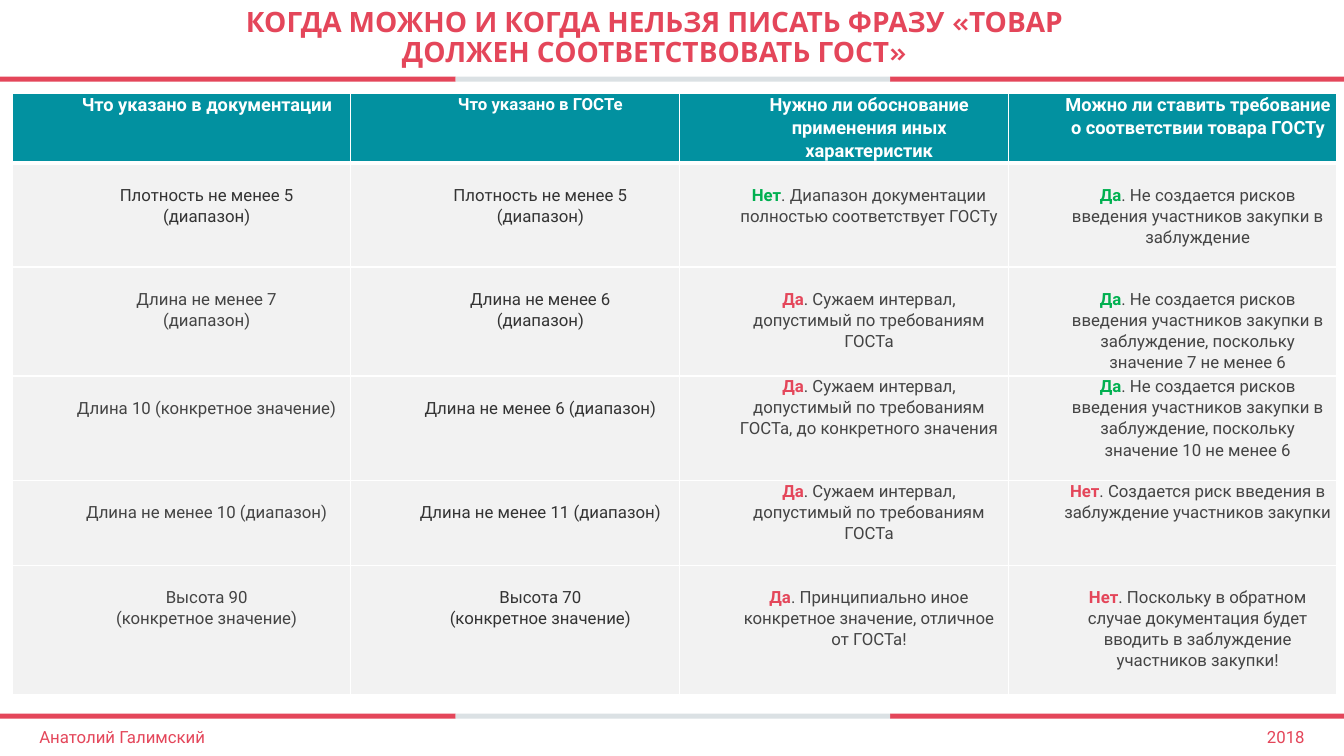
from dataclasses import dataclass

from lxml import etree
from pptx import Presentation
from pptx.dml.color import RGBColor
from pptx.enum.shapes import MSO_SHAPE
from pptx.enum.text import MSO_ANCHOR, MSO_AUTO_SIZE, PP_ALIGN
from pptx.oxml.ns import qn
from pptx.util import Inches, Pt

RECT = MSO_SHAPE.RECTANGLE
LEFT, CENTER, RIGHT = PP_ALIGN.LEFT, PP_ALIGN.CENTER, PP_ALIGN.RIGHT
TOP, MIDDLE = MSO_ANCHOR.TOP, MSO_ANCHOR.MIDDLE
NO_FIT = MSO_AUTO_SIZE.NONE


@dataclass(frozen=True)
class Theme:
    red: str = "E4465A"
    green: str = "00B050"
    teal: str = "0291A0"
    silver: str = "DBE1E4"
    cell: str = "F2F2F2"
    white: str = "FFFFFF"
    dark: str = "333333"
    gray: str = "444444"
    title_font: str = "Karla"
    body_font: str = "Roboto"
    title_size: int = 20
    header_size: int = 13
    body_size: int = 12


THEME = Theme()

TITLE = "КОГДА МОЖНО И КОГДА НЕЛЬЗЯ ПИСАТЬ ФРАЗУ «ТОВАР ДОЛЖЕН СООТВЕТСТВОВАТЬ ГОСТ»"
HEADERS = [
    "Что указано в документации",
    "Что указано в ГОСТе",
    "Нужно ли обоснование применения иных характеристик",
    "Можно ли ставить требование о соответствии товара ГОСТу",
]
HEADER_SIZES = [THEME.header_size, THEME.body_size, THEME.header_size, THEME.header_size]
NO_RISK = ". Не создается рисков введения участников закупки в заблуждение"
NARROW = ". Сужаем интервал, допустимый по требованиям ГОСТа"
GOOD_YES, BAD_YES = ("Да", THEME.green), ("Да", THEME.red)
GOOD_NO, BAD_NO = ("Нет", THEME.green), ("Нет", THEME.red)
ROWS = [
    ("Плотность не менее 5\n(диапазон)", "Плотность не менее 5\n(диапазон)",
     (GOOD_NO, ". Диапазон документации полностью соответствует ГОСТу"),
     (GOOD_YES, NO_RISK)),
    ("Длина не менее 7\n(диапазон)", "Длина не менее 6\n(диапазон)",
     (BAD_YES, NARROW),
     (GOOD_YES, NO_RISK + ", поскольку значение 7 не менее 6")),
    ("Длина 10 (конкретное значение)", "Длина не менее 6 (диапазон)",
     (BAD_YES, NARROW + ", до конкретного значения"),
     (GOOD_YES, NO_RISK + ", поскольку значение 10 не менее 6")),
    ("Длина не менее 10 (диапазон)", "Длина не менее 11 (диапазон)",
     (BAD_YES, NARROW),
     (BAD_NO, ". Создается риск введения в заблуждение участников закупки")),
    ("Высота 90\n(конкретное значение)", "Высота 70\n(конкретное значение)",
     (BAD_YES, ". Принципиально иное конкретное значение, отличное от ГОСТа!"),
     (BAD_NO, ". Поскольку в обратном случае документация будет вводить в заблуждение участников закупки!")),
]
COL_WIDTHS = [3.36, 3.26, 3.26, 3.26]
ROW_HEIGHTS = [0.69, 1.03, 1.08, 1.04, 0.84, 1.28]
LINE = 0.21
HIGH_VERDICT_ROWS = (3, 4)


def add_text(p, text, font=THEME.body_font, size=THEME.body_size,
             color=THEME.gray, bold=False, align=CENTER, spacing=1.0, indent=0):
    p.alignment = align
    p.line_spacing = spacing
    if indent:
        p_pr = p._p.get_or_add_pPr()
        p_pr.set("marL", str(Inches(indent)))
        p_pr.set("indent", "0")
    r = p.add_run()
    r.text = text
    r.font.name = font
    r.font.size = Pt(size)
    r.font.bold = bold
    r.font.color.rgb = RGBColor.from_string(color)


class SlideBuilder:
    def __init__(self, prs, theme):
        self.theme = theme
        self.s = prs.slides.add_slide(prs.slide_layouts[5])

    def title(self, text, x, y, w, h):
        sp = self.s.shapes.title
        sp.left, sp.top, sp.width, sp.height = map(Inches, (x, y, w, h))
        tf = sp.text_frame
        tf.word_wrap = True
        tf.auto_size = NO_FIT
        tf.vertical_anchor = MIDDLE
        add_text(tf.paragraphs[0], text, font=self.theme.title_font,
                 size=self.theme.title_size, color=self.theme.red, bold=True, spacing=0.9)

    def stripe(self, y):
        t = self.theme
        for x, w, color in ((0, 4.52, t.red), (8.83, 4.5, t.red), (4.52, 4.31, t.silver)):
            sp = self.s.shapes.add_shape(RECT, Inches(x), Inches(y), Inches(w), Inches(0.05))
            sp.shadow.inherit = False
            sp.fill.solid()
            sp.fill.fore_color.rgb = RGBColor.from_string(color)
            sp.line.fill.background()

    def label(self, text, x, y, w, h, align):
        sp = self.s.shapes.add_textbox(Inches(x), Inches(y), Inches(w), Inches(h))
        tf = sp.text_frame
        tf.word_wrap = True
        tf.vertical_anchor = MIDDLE
        tf.margin_left = tf.margin_top = tf.margin_right = tf.margin_bottom = 0
        add_text(tf.paragraphs[0], text, color=self.theme.red, align=align)

    def border(self, cell, side, width):
        ln = etree.SubElement(cell._tc.get_or_add_tcPr(), qn(f"a:{side}"), w=str(Pt(width)))
        fill = etree.SubElement(ln, qn("a:solidFill"))
        etree.SubElement(fill, qn("a:srgbClr"), val=self.theme.white)

    def cell(self, cell, fill, top=0, under=1, over=1):
        for side, width in (("lnL", 1), ("lnR", 1), ("lnT", over), ("lnB", under)):
            self.border(cell, side, width)
        cell.fill.solid()
        cell.fill.fore_color.rgb = RGBColor.from_string(fill)
        cell.margin_left = cell.margin_right = Inches(0.04)
        cell.margin_top, cell.margin_bottom = Inches(top), 0
        cell.vertical_anchor = TOP
        return cell.text_frame

    def table(self, x, y):
        t = self.theme
        frame = self.s.shapes.add_table(
            len(ROW_HEIGHTS), len(COL_WIDTHS), Inches(x), Inches(y),
            Inches(sum(COL_WIDTHS)), Inches(sum(ROW_HEIGHTS)))
        tbl = frame.table
        for col, w in zip(tbl.columns, COL_WIDTHS):
            col.width = Inches(w)
        for row, h in zip(tbl.rows, ROW_HEIGHTS):
            row.height = Inches(h)
        layout = dict(spacing=1.07, indent=0.5)
        for j, (text, size) in enumerate(zip(HEADERS, HEADER_SIZES)):
            tf = self.cell(tbl.cell(0, j), t.teal, under=3)
            add_text(tf.paragraphs[0], text, size=size, color=t.white, bold=True, **layout)
        for i, values in enumerate(ROWS, 1):
            for j, value in enumerate(values):
                verdict = j >= 2
                top = 0 if verdict and i in HIGH_VERDICT_ROWS else LINE
                tf = self.cell(tbl.cell(i, j), t.cell, top=top, over=3 if i == 1 else 1)
                if verdict:
                    (word, color), reason = value
                    p = tf.paragraphs[0]
                    add_text(p, word, color=color, bold=True, **layout)
                    add_text(p, reason, **layout)
                    continue
                color = t.dark if j == 1 or i == 1 else t.gray
                for k, line in enumerate(value.split("\n")):
                    p = tf.add_paragraph() if k else tf.paragraphs[0]
                    add_text(p, line, color=color, **layout)


def main():
    prs = Presentation()
    prs.slide_width, prs.slide_height = Inches(13.33), Inches(7.5)
    slide = SlideBuilder(prs, THEME)
    for y in (0.76, 7.08):
        slide.stripe(y)
    slide.table(0.12, 0.93)
    slide.title(TITLE, 1.97, 0, 9.04, 0.76)
    slide.label("Анатолий Галимский", 0.39, 7.13, 8.43, 0.36, LEFT)
    slide.label("2018", 9.94, 7.13, 3, 0.36, RIGHT)
    prs.save("out.pptx")


if __name__ == "__main__":
    main()
